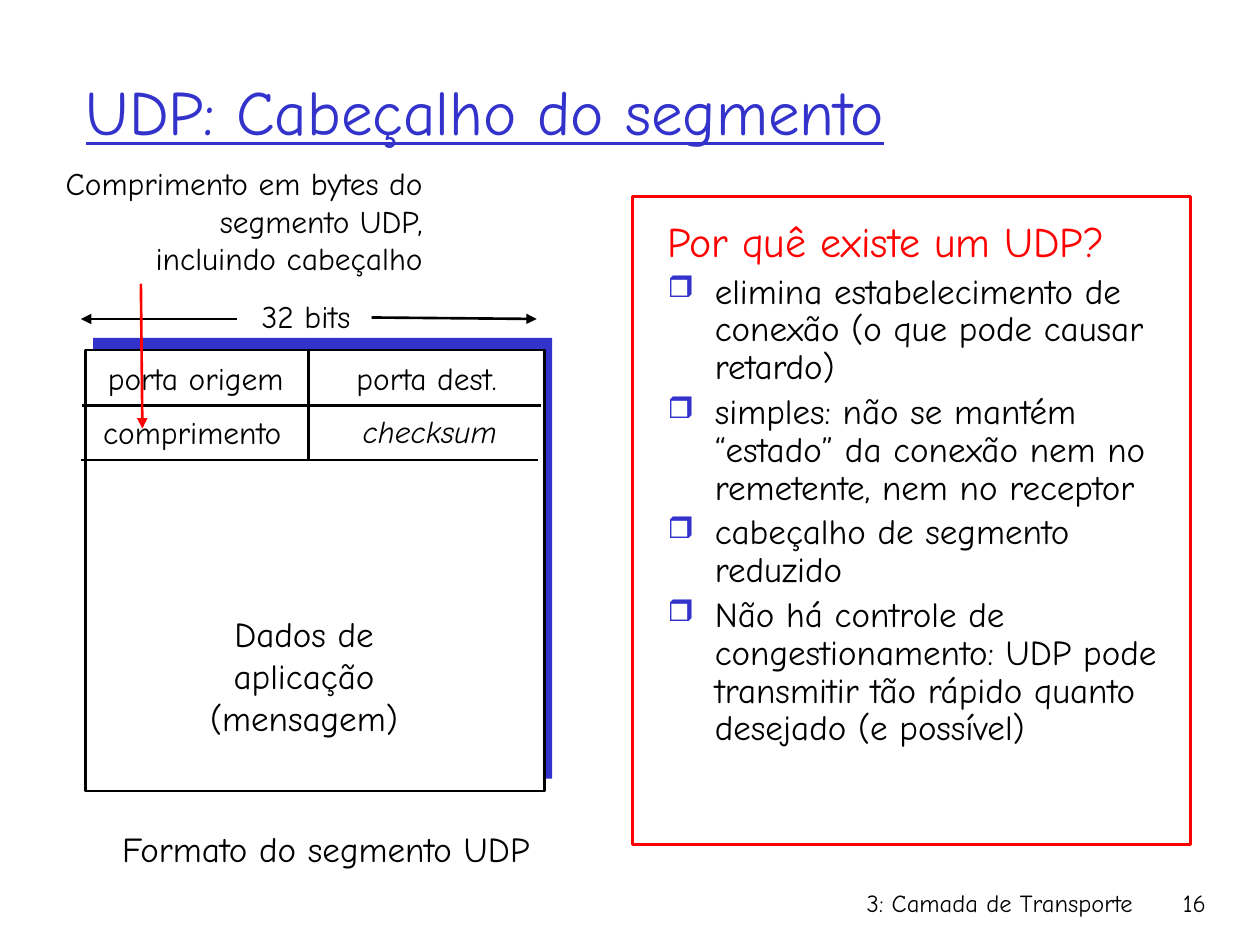
"""Builds the slide on the UDP segment header and the reasons for UDP."""
from lxml import etree
from pptx import Presentation
from pptx import util as u
from pptx.dml import color
from pptx.enum import shapes, text
from pptx.oxml import ns

BLUE = color.RGBColor(0x33, 0x33, 0xCC)
BLACK = color.RGBColor(0, 0, 0)
WHITE = color.RGBColor(0xFF, 0xFF, 0xFF)
RED = color.RGBColor(0xFF, 0, 0)
FACE = "Comic Neue"
LEFT, CENTER, RIGHT = text.PP_ALIGN.LEFT, text.PP_ALIGN.CENTER, text.PP_ALIGN.RIGHT

TITLE = "UDP: Cabeçalho do segmento"
TITLE_AREA = (1.47, 0.64, 21.59, 3.18)

PANELS = [
    ((1.88, 6.81, 9.25, 8.89), BLUE, None),
    ((1.73, 7.06, 9.25, 8.89), WHITE, BLACK),
    ((12.75, 3.96, 11.25, 13.06), None, RED),
]

LABELS = [
    (["porta origem"], (1.8, 7.11, 4.29, 1.02), CENTER, {"size": u.Pt(18)}),
    (["porta dest."], (6.71, 7.11, 3.78, 1.02), CENTER, {"size": u.Pt(18)}),
    (["comprimento"], (1.73, 8.2, 4.29, 1.02), CENTER, {"size": u.Pt(18)}),
    (["checksum"], (6.99, 8.18, 3.35, 1.02), CENTER, {"size": u.Pt(18), "italic": True}),
    (["32 bits"], (4.85, 5.87, 2.64, 1.02), CENTER, {"size": u.Pt(18)}),
    (["Dados de", "aplicação", "(mensagem)"], (3.96, 12.22, 4.34, 2.79), CENTER, {"size": u.Pt(20)}),
    (["Formato do segmento UDP"], (1.98, 16.56, 9.19, 1.09), CENTER, {"size": u.Pt(20)}),
    (["Comprimento em bytes do", "segmento UDP,", "incluindo cabeçalho"],
     (0.46, 3.18, 8.31, 2.57), RIGHT, {"size": u.Pt(18)}),
    (["3: Camada de Transporte"], (15.04, 17.78, 8.05, 1.27), RIGHT, {"size": u.Pt(14)}),
    (["16"], (22.68, 17.78, 1.88, 1.27), RIGHT, {"size": u.Pt(14)}),
]

RULES = [
    ((1.65, 8.18, 10.9, 8.18), BLACK, False),
    ((1.63, 9.27, 10.85, 9.27), BLACK, False),
    ((6.22, 8.15, 6.22, 7.06), BLACK, False),
    ((6.22, 9.3, 6.22, 8.2), BLACK, False),
    ((7.49, 6.4, 10.82, 6.43), BLACK, True),
    ((4.78, 6.43, 1.63, 6.43), BLACK, True),
    ((2.84, 5.72, 2.87, 8.64), RED, True),
]

QUESTION = "Por quê existe um UDP?"
REASONS = [
    "elimina estabelecimento de conexão (o que pode causar retardo)",
    "simples: não se mantém “estado” da conexão nem no remetente, nem no receptor",
    "cabeçalho de segmento reduzido",
    "Não há controle de congestionamento: UDP pode transmitir tão rápido quanto desejado (e possível)",
]
REASONS_AREA = (13.21, 4.34, 10.59, 10.62)


def cm(lengths):
    return [u.Cm(length) for length in lengths]


def style(paragraph, ink, formats):
    for key, value in {"name": FACE, **formats}.items():
        setattr(paragraph.font, key, value)
    paragraph.font.color.rgb = ink


def add_panel(slide, area, fill, edge):
    panel = slide.shapes.add_shape(shapes.MSO_SHAPE.RECTANGLE, *cm(area))
    panel.shadow.inherit = False
    if fill is None:
        panel.fill.background()
    else:
        panel.fill.solid()
        panel.fill.fore_color.rgb = fill
    if edge is None:
        panel.line.fill.background()
    else:
        panel.line.color.rgb = edge
        panel.line.width = u.Pt(1.5)


def add_frame(slide, lines, area, wrap):
    frame = slide.shapes.add_textbox(*cm(area)).text_frame
    frame.word_wrap = wrap
    frame.text = "\n".join(lines)
    return frame


def add_label(slide, lines, area, align, formats):
    for paragraph in add_frame(slide, lines, area, align == RIGHT).paragraphs:
        paragraph.alignment = align
        style(paragraph, BLACK, formats)


def add_rule(slide, ends, ink, arrow):
    rule = slide.shapes.add_connector(shapes.MSO_CONNECTOR.STRAIGHT, *cm(ends))
    rule.line.color.rgb = ink
    rule.line.width = u.Pt(1.5)
    if arrow:
        etree.SubElement(rule.line._get_or_add_ln(), ns.qn("a:tailEnd"), type="triangle")
    etree.SubElement(rule._element.spPr, ns.qn("a:effectLst"))


def add_bullet(properties):
    tint = etree.SubElement(properties, ns.qn("a:buClr"))
    etree.SubElement(tint, ns.qn("a:srgbClr"), val=str(BLUE))
    etree.SubElement(properties, ns.qn("a:buSzPct"), val="85000")
    etree.SubElement(properties, ns.qn("a:buChar"), char="❒")


def add_reasons(slide):
    frame = add_frame(slide, [QUESTION, *REASONS], REASONS_AREA, True)
    for index, paragraph in enumerate(frame.paragraphs):
        paragraph.line_spacing = 0.9
        properties = paragraph._p.get_or_add_pPr()
        properties.set("marL", str(u.Cm(0.95)))
        properties.set("indent", str(u.Cm(-0.95)))
        if index:
            paragraph.space_before = u.Pt(4)
            add_bullet(properties)
        style(paragraph, BLACK if index else RED, {"size": u.Pt(20 if index else 24)})


def add_title(slide):
    title = slide.shapes.title
    title.left, title.top, title.width, title.height = cm(TITLE_AREA)
    frame = title.text_frame
    frame.text = TITLE
    frame.auto_size = text.MSO_AUTO_SIZE.NONE
    frame.vertical_anchor = text.MSO_ANCHOR.MIDDLE
    heading = frame.paragraphs[0]
    heading.alignment = LEFT
    style(heading, BLUE, {"size": u.Pt(36), "underline": True})


def main():
    deck = Presentation()
    deck.slide_width, deck.slide_height = cm((25.4, 19.05))
    slide = deck.slides.add_slide(deck.slide_layouts[5])
    add_title(slide)
    for add, parts in ((add_panel, PANELS), (add_label, LABELS), (add_rule, RULES)):
        for part in parts:
            add(slide, *part)
    add_reasons(slide)
    deck.save("out.pptx")


if __name__ == "__main__":
    main()
